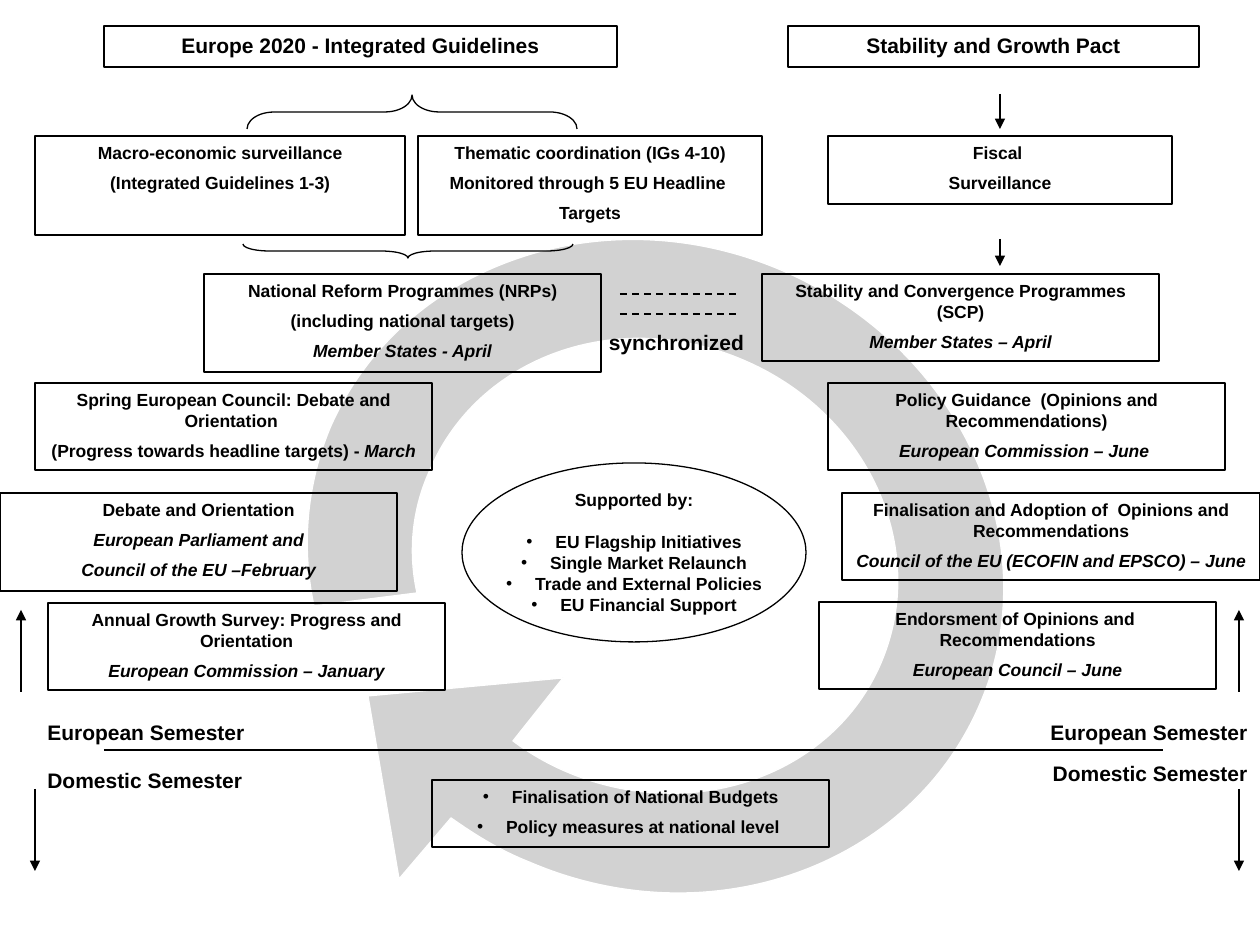
from math import cos, radians, sin

from lxml import etree
from pptx import Presentation
from pptx.dml.color import RGBColor
from pptx.enum.dml import MSO_LINE
from pptx.enum.shapes import MSO_CONNECTOR, MSO_SHAPE
from pptx.enum.text import MSO_ANCHOR, PP_ALIGN
from pptx.oxml.ns import qn
from pptx.util import Emu, Pt

BLACK = RGBColor(0, 0, 0)
WHITE = RGBColor(255, 255, 255)
SILVER = RGBColor(192, 192, 192)
RECTANGLE, OVAL, BRACE = MSO_SHAPE.RECTANGLE, MSO_SHAPE.OVAL, MSO_SHAPE.LEFT_BRACE
STRAIGHT = MSO_CONNECTOR.STRAIGHT
DASH = MSO_LINE.DASH
LEFT, CENTER, RIGHT = PP_ALIGN.LEFT, PP_ALIGN.CENTER, PP_ALIGN.RIGHT
MIDDLE, TOP = MSO_ANCHOR.MIDDLE, MSO_ANCHOR.TOP

PX = 914400 / 126
BULLET_INDENT = 29

CYCLE_AREA = (302, 244, 706, 644)
CYCLE_TURN = 23
CYCLE_START = (513, 741)
CYCLE = [
    [(529, 753), (548, 764), (567, 772)],
    [(692, 825), (833, 776), (881, 663)],
    [(930, 548), (868, 413), (743, 360)],
    [(617, 306), (478, 357), (430, 470)],
    [(412, 509), (408, 552), (417, 593)],
    [(314, 606)],
    [(301, 546), (307, 484), (330, 428)],
    [(401, 265), (602, 194), (781, 270)],
    [(960, 347), (1050, 541), (980, 704)],
    [(910, 868), (708, 939), (529, 862)],
    [(501, 851), (475, 835), (451, 818)],
    [(399, 879)],
    [(368, 696)],
    [(563, 678)],
]

HEADINGS = [
    ((104, 26, 513, 41), "Europe 2020 - Integrated Guidelines"),
    ((788, 26, 411, 41), "Stability and Growth Pact"),
]

BOXES = [
    ((35, 136, 370, 99), 1.25, [("Macro-economic surveillance", ""),
                                ("(Integrated Guidelines 1-3)", "")]),
    ((418, 136, 344, 99), 1.5, [("Thematic coordination (IGs 4-10)", ""),
                                ("Monitored through 5 EU Headline ", ""),
                                ("Targets", "")]),
    ((828, 136, 344, 68), 1.5, [("Fiscal ", ""), ("Surveillance", "")]),
    ((204, 274, 397, 98), 0.75, [("National Reform Programmes (NRPs)", ""),
                                 ("(including national targets)", ""),
                                 ("", "Member States - April")]),
    ((762, 274, 397, 87), 0.75, [("Stability and Convergence Programmes (SCP)", ""),
                                 ("", "Member States – April")]),
    ((828, 383, 397, 87), 0.75, [("Policy Guidance  (Opinions and Recommendations)", ""),
                                 ("", "European Commission – June ")]),
    ((842, 493, 418, 87), 0.75, [("Finalisation and Adoption of  Opinions and Recommendations", ""),
                                 ("", "Council of the EU (ECOFIN and EPSCO) – June")]),
    ((819, 602, 397, 87), 0.75, [("Endorsment of Opinions and  Recommendations", ""),
                                 ("", "European Council – June")]),
    ((35, 383, 397, 87), 0.75, [("Spring European Council: Debate and Orientation ", ""),
                                ("(Progress towards headline targets) - ", "March")]),
    ((48, 603, 397, 87), 0.75, [("Annual Growth Survey: Progress and Orientation", ""),
                                ("", "European Commission – January")]),
    ((0, 493, 397, 98), 0.75, [("Debate and Orientation", ""),
                               ("", "European Parliament and"),
                               ("", "Council of the EU –February")]),
]

BUDGET_AREA = (432, 780, 397, 67)
BUDGET_STEPS = ["Finalisation of National Budgets", "Policy measures at national level "]

SUPPORT_AREA = (462, 463, 344, 179)
SUPPORT_TITLE = "Supported by:"
SUPPORTS = ["EU Flagship Initiatives", "Single Market Relaunch",
            "Trade and External Policies", "EU Financial Support"]

CAPTIONS = [
    ((908, 713, 352, 38), RIGHT, "European Semester"),
    ((934, 754, 326, 38), RIGHT, "Domestic Semester"),
    ((581, 323, 191, 38), CENTER, "synchronized"),
    ((35, 713, 352, 38), LEFT, "European Semester"),
    ((35, 761, 326, 38), LEFT, "Domestic Semester"),
]

BRACES = [((395, -53, 34, 330), 90, 0.8), ((401, 86, 14, 330), 270, 1.91)]
ARROWS = [(1000, 94, 129), (1000, 239, 266), (1239, 692, 610),
          (1239, 789, 871), (21, 692, 610), (35, 789, 871)]
SYNC_LINES = [294, 314]
SEMESTER_DIVIDER = (104, 750, 1163, 750)


def emu(*lengths):
    return [Emu(round(length * PX)) for length in lengths]


def turn_back(point):
    left, top, width, height = CYCLE_AREA
    dx, dy = point[0] - left - width / 2, point[1] - top - height / 2
    angle = radians(CYCLE_TURN)
    return emu(width / 2 + dx * cos(angle) + dy * sin(angle),
               height / 2 - dx * sin(angle) + dy * cos(angle))


def add_cycle(shapes):
    builder = shapes.build_freeform(*CYCLE_START, scale=PX)
    builder.add_line_segments([segment[-1] for segment in CYCLE], close=True)
    cycle = builder.convert_to_shape()
    cycle.left, cycle.top, cycle.width, cycle.height = emu(*CYCLE_AREA)
    cycle.rotation = CYCLE_TURN

    outline = next(cycle._element.iter(qn("a:path")))
    for step in list(outline):
        outline.remove(step)
    outline.set("w", str(cycle.width))
    outline.set("h", str(cycle.height))
    for index, segment in enumerate([[CYCLE_START]] + CYCLE):
        tag = "a:cubicBezTo" if len(segment) == 3 else "a:lnTo" if index else "a:moveTo"
        step = etree.SubElement(outline, qn(tag))
        for point in segment:
            x, y = turn_back(point)
            etree.SubElement(step, qn("a:pt"), x=str(x), y=str(y))
    etree.SubElement(outline, qn("a:close"))

    cycle.shadow.inherit = False
    cycle.fill.solid()
    cycle.fill.fore_color.rgb = SILVER
    color = cycle._element.spPr.find(qn("a:solidFill"))[0]
    etree.SubElement(color, qn("a:alpha"), val="70000")
    cycle.line.color.rgb = WHITE
    cycle.line.width = Pt(0.75)


def add_outline(shapes, kind, area, width):
    outline = shapes.add_shape(kind, *emu(*area))
    outline.shadow.inherit = False
    outline.fill.background()
    outline.line.color.rgb = BLACK
    outline.line.width = Pt(width)
    return outline


def write(shape, paragraphs, size=10, align=CENTER, anchor=TOP, gap=5):
    frame = shape.text_frame
    frame.word_wrap = True
    frame.vertical_anchor = anchor
    for index, parts in enumerate(paragraphs):
        paragraph = frame.add_paragraph() if index else frame.paragraphs[0]
        paragraph.alignment = align
        if index:
            paragraph.space_before = Pt(gap)
        for text, italic in zip(parts, (False, True)):
            if text:
                run = paragraph.add_run()
                run.text = text
                run.font.name = "Arial"
                run.font.size = Pt(size)
                run.font.bold = True
                run.font.italic = italic
                run.font.color.rgb = BLACK
    return frame


def add_bullets(paragraphs):
    indent = emu(BULLET_INDENT)[0]
    for paragraph in paragraphs:
        properties = paragraph._p.get_or_add_pPr()
        properties.set("marL", str(indent))
        properties.set("indent", str(-indent))
        etree.SubElement(properties, qn("a:buFont"), typeface="Arial")
        etree.SubElement(properties, qn("a:buChar"), char="•")


def add_line(shapes, ends, width, dash=None, arrow=False):
    connector = shapes.add_connector(STRAIGHT, *emu(*ends))
    connector.line.color.rgb = BLACK
    connector.line.width = Pt(width)
    if dash:
        connector.line.dash_style = dash
    if arrow:
        etree.SubElement(connector.line._get_or_add_ln(), qn("a:tailEnd"), type="triangle")
    etree.SubElement(connector._element.spPr, qn("a:effectLst"))


def main():
    deck = Presentation()
    deck.slide_width, deck.slide_height = emu(1260, 945)
    shapes = deck.slides.add_slide(deck.slide_layouts[6]).shapes

    add_cycle(shapes)
    for area, heading in HEADINGS:
        write(add_outline(shapes, RECTANGLE, area, 1.5), [(heading,)], size=12)
    for area, width, paragraphs in BOXES:
        write(add_outline(shapes, RECTANGLE, area, width), paragraphs)
    budget = write(add_outline(shapes, RECTANGLE, BUDGET_AREA, 0.75),
                   [(step,) for step in BUDGET_STEPS])
    add_bullets(budget.paragraphs)

    support = write(add_outline(shapes, OVAL, SUPPORT_AREA, 0.75),
                    [(text,) for text in [SUPPORT_TITLE] + SUPPORTS], anchor=MIDDLE, gap=0)
    support.word_wrap = False
    support.paragraphs[1].space_before = Pt(12)
    add_bullets(support.paragraphs[1:])

    for area, align, caption in CAPTIONS:
        write(shapes.add_textbox(*emu(*area)), [(caption,)], size=12, align=align)
    for area, rotation, curl in BRACES:
        brace = add_outline(shapes, BRACE, area, 0.75)
        brace.rotation = rotation
        brace.adjustments[0] = curl
    for x, start, end in ARROWS:
        add_line(shapes, (x, start, x, end), 0.75, arrow=True)
    for y in SYNC_LINES:
        add_line(shapes, (620, y, 740, y), 1, dash=DASH)
    add_line(shapes, SEMESTER_DIVIDER, 1.5)

    deck.save("out.pptx")


if __name__ == "__main__":
    main()
